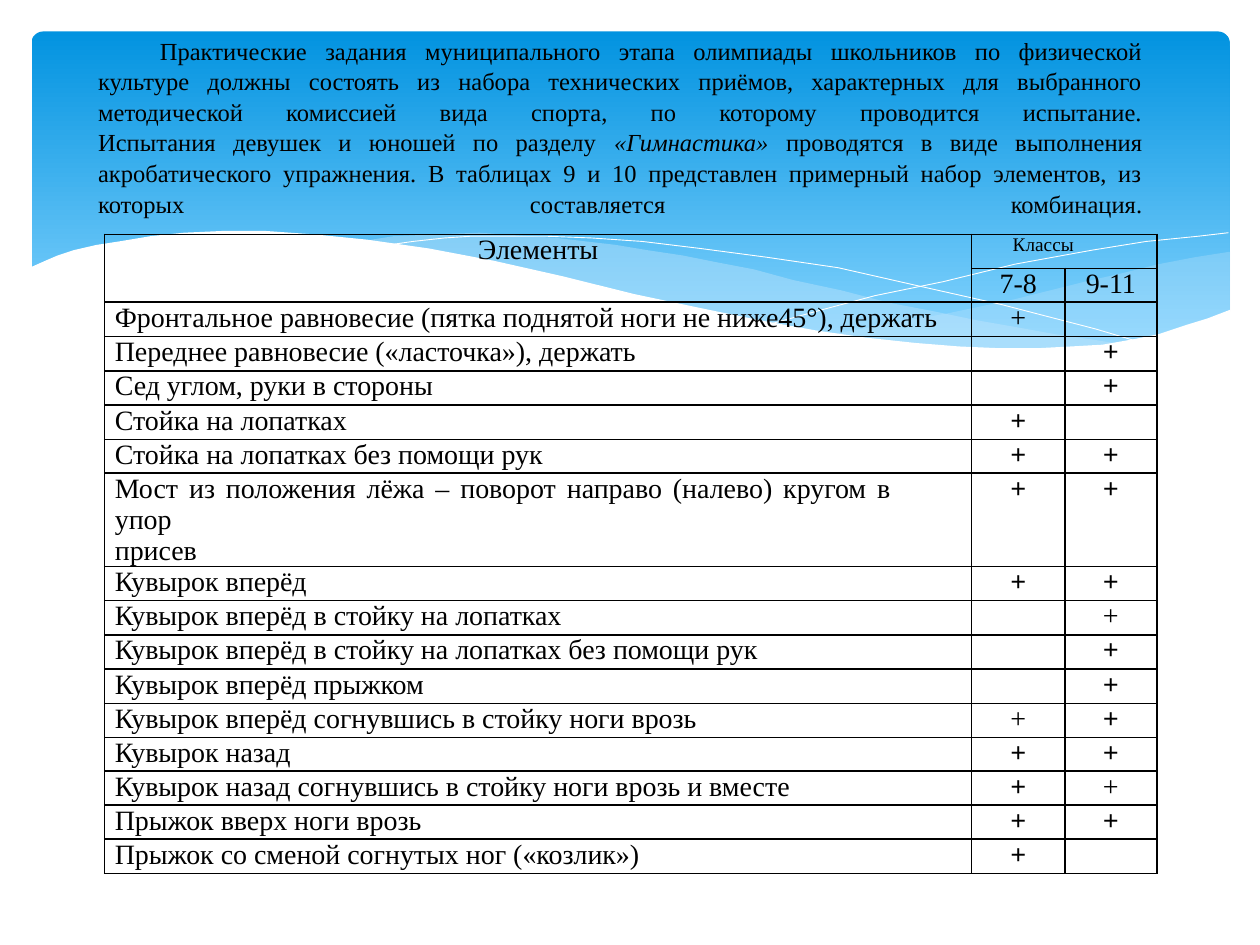
from lxml import etree
from pptx import Presentation
from pptx.dml.color import RGBColor
from pptx.enum.shapes import MSO_SHAPE
from pptx.enum.text import MSO_ANCHOR, PP_ALIGN
from pptx.oxml.ns import qn
from pptx.util import Pt

CENTER, JUSTIFY, LEFT = PP_ALIGN.CENTER, PP_ALIGN.JUSTIFY, PP_ALIGN.LEFT
FONT = "Times New Roman"
BLACK, WHITE, PALE_BLUE = "000000", "FFFFFF", "C6E7FC"
TITLE_SIZE, HEAD_SIZE, BODY_SIZE = 14, 11, 16

# Each inner list is a line of (text, italic) pieces; lines end with a break.
TITLE_LINES = [
    [("Практические задания муниципального этапа олимпиады школьников по физической "
      "культуре должны состоять из набора технических приёмов, характерных для "
      "выбранного методической комиссией вида спорта, по которому проводится "
      "испытание.", False)],
    [("Испытания девушек и юношей по разделу ", False),
     ("«Гимнастика» ", True),
     ("проводятся в виде выполнения акробатического упражнения. В таблицах 9 и 10 "
      "представлен примерный набор элементов, из которых составляется "
      "комбинация.", False)],
]

# Element, mark for 7-8, mark for 9-11: "B" bold plus, "+" regular plus, "" none
ELEMENTS = [
    ("Фронтальное равновесие (пятка поднятой ноги не ниже45°), держать", "+", ""),
    ("Переднее равновесие («ласточка»), держать", "", "B"),
    ("Сед углом, руки в стороны", "", "B"),
    ("Стойка на лопатках", "B", ""),
    ("Стойка на лопатках без помощи рук", "B", "B"),
    ("Мост из положения лёжа – поворот направо (налево) кругом в упор\nприсев", "B", "B"),
    ("Кувырок вперёд", "B", "B"),
    ("Кувырок вперёд в стойку на лопатках", "", "+"),
    ("Кувырок вперёд в стойку на лопатках без помощи рук", "", "B"),
    ("Кувырок вперёд прыжком", "", "B"),
    ("Кувырок вперёд согнувшись в стойку ноги врозь", "+", "B"),
    ("Кувырок назад", "B", "B"),
    ("Кувырок назад согнувшись в стойку ноги врозь и вместе", "B", "+"),
    ("Прыжок вверх ноги врозь", "B", "B"),
    ("Прыжок со сменой согнутых ног («козлик»)", "B", ""),
]
COLUMN_WIDTHS = [495.4, 53.3, 52.6]
ROW_HEIGHT, TALL_ROW_HEIGHT = 19.4, 53.3

RIGHT_SWELL = [
    (702, 144), (682.6, 146.9), (662.4, 151.2), (641.5, 155.5), (619.9, 160.6),
    (579.6, 170.6), (542.2, 178.6), (508.3, 185), (475.9, 190.8), (497.5, 193.7),
    (517.7, 195.8), (536.4, 198), (553.7, 199.4), (570.2, 199.4), (586.1, 200.2),
    (601.2, 199.4), (614.9, 198.7), (627.8, 197.3), (640.1, 195.8), (651.6, 193.7),
    (663.1, 190.8), (673.2, 188.6), (683.3, 185), (693.4, 181.4), (702.7, 177.8),
    (702.7, 144)]
MIDDLE_SWELL = [
    (643, 196.6), (623.5, 193.7), (602.6, 190.8), (581, 187.2), (558, 182.9),
    (533.5, 177.8), (508.3, 172.8), (481, 166.3), (452.9, 159.8), (430.6, 154.1),
    (409.7, 149.8), (389.5, 146.2), (370.1, 142.6), (352.1, 139.7), (334.8, 137.5),
    (318.2, 136.1), (302.4, 134.6), (273.6, 133.2), (247.7, 133.9), (225.4, 135.4),
    (205.9, 137.5), (232.6, 141.1), (260.6, 146.2), (290.9, 151.9), (323.3, 159.8),
    (353.5, 167), (381.6, 172.8), (407.5, 178.6), (432.7, 183.6), (456.5, 187.9),
    (478.8, 191.5), (500.4, 194.4), (519.8, 197.3), (538.6, 198.7), (556.6, 199.4),
    (573.1, 200.2), (596.2, 200.2), (617, 199.4), (630.7, 198)]
FALLING_LINE = [
    (222.5, 140.4), (236.2, 138.2), (254.2, 136.1), (269.3, 135.4), (288.7, 134.6),
    (311.8, 134.6), (337.7, 136.1), (367.2, 138.2), (400.3, 141.8), (437.8, 146.9),
    (478.8, 153.4), (523.4, 162.7), (572.4, 173.5), (625.7, 187.9), (653, 195.8)]
RISING_LINE = [
    (441.4, 185), (470.2, 177.1), (500.4, 169.2), (538.6, 160.6), (580.3, 151.2),
    (623.5, 143.3), (655.2, 138.2), (684.7, 134.6), (702, 133.2)]
WHITE_WAVE = [
    (703.4, 177.1), (690.5, 182.2), (676.8, 186.5), (662.4, 190.8), (647.3, 193.7),
    (630, 196.6), (612, 198), (592.6, 199.4), (571, 198.7), (547.9, 198),
    (522.7, 195.8), (495.4, 193), (466.6, 188.6), (434.2, 182.9), (399.6, 176.4),
    (362.2, 167.8), (321.8, 158.4), (281.5, 149), (244.8, 141.8), (210.2, 136.8),
    (180, 133.9), (151.9, 132.5), (127.4, 132.5), (105.1, 133.2), (85.7, 134.6),
    (68.4, 137.5), (54.7, 140.4), (42.5, 143.3), (33.1, 146.2), (25.9, 149),
    (16.6, 153.4), (16.6, 236.9), (703.4, 236.9)]
# Points, fill, opacity in percent; no fill makes an open white line
WAVES = [
    (RIGHT_SWELL, PALE_BLUE, 29),
    (MIDDLE_SWELL, PALE_BLUE, 40),
    (FALLING_LINE, None, 100),
    (RISING_LINE, None, 100),
    (WHITE_WAVE, WHITE, 100),
]


def rgb(color):
    return RGBColor.from_string(color)


def add_wave(slide, points, fill, opacity):
    builder = slide.shapes.build_freeform(*points[0], scale=Pt(1))
    builder.add_line_segments(points[1:], close=fill is not None)
    wave = builder.convert_to_shape()
    wave.shadow.inherit = False
    if fill is None:
        wave.fill.background()
        wave.line.color.rgb = rgb(WHITE)
        wave.line.width = Pt(0.5)
        return
    wave.line.fill.background()
    wave.fill.solid()
    wave.fill.fore_color.rgb = rgb(fill)
    if opacity < 100:
        color = wave.fill._xPr.find(".//" + qn("a:srgbClr"))
        etree.SubElement(color, qn("a:alpha"), val=str(opacity * 1000))


def format_paragraph(paragraph, size, align, left=0, right=0, first=0, bold=False):
    """Format runs, breaks and the paragraph end alike."""
    paragraph.alignment = align
    properties = paragraph._p.get_or_add_pPr()
    for name, length in (("marL", left), ("marR", right), ("indent", first)):
        properties.set(name, str(int(Pt(length))))
    for run in paragraph.runs:
        run.font.name = FONT
        run.font.size = Pt(size)
        run.font.bold = bold
        run.font.color.rgb = rgb(BLACK)
    for line_break in paragraph._p.findall(qn("a:br")):
        etree.SubElement(line_break, qn("a:rPr"), sz=str(size * 100))
    etree.SubElement(paragraph._p, qn("a:endParaRPr"), sz=str(size * 100))


def add_border(cell):
    properties = cell._tc.get_or_add_tcPr()
    for position, side in enumerate(("a:lnL", "a:lnR", "a:lnT", "a:lnB")):
        line = etree.Element(qn(side), w=str(int(Pt(1))))
        solid = etree.SubElement(line, qn("a:solidFill"))
        etree.SubElement(solid, qn("a:srgbClr"), val=BLACK)
        properties.insert(position, line)


def fill_cell(cell, text, size=BODY_SIZE, align=CENTER, **layout):
    cell.text_frame.text = text
    for paragraph in cell.text_frame.paragraphs:
        format_paragraph(paragraph, size, align, **layout)


def add_backdrop(slide):
    sky = slide.shapes.add_shape(MSO_SHAPE.ROUNDED_RECTANGLE,
                                 Pt(18), Pt(18), Pt(684.7), Pt(194.4))
    sky.adjustments[0] = 0.034
    sky.shadow.inherit = False
    sky.line.fill.background()
    sky.fill.gradient()
    sky.fill.gradient_angle = 270
    for stop, color, position in zip(sky.fill.gradient_stops, ("0293E0", "83D3FE"), (0, 0.9)):
        stop.color.rgb = rgb(color)
        stop.position = position
    for wave in WAVES:
        add_wave(slide, *wave)


def add_elements_table(slide):
    row_count = len(ELEMENTS) + 2
    table = slide.shapes.add_table(row_count, 3, Pt(59.8), Pt(133.9), Pt(sum(COLUMN_WIDTHS)),
                                   Pt(ROW_HEIGHT * row_count)).table
    table.first_row = table.horz_banding = False
    for column, width in zip(table.columns, COLUMN_WIDTHS):
        column.width = Pt(width)
    for row in table.rows:
        row.height = Pt(ROW_HEIGHT)
    for cell in table.iter_cells():
        cell.fill.background()
        cell.margin_left = cell.margin_right = cell.margin_top = cell.margin_bottom = 0
        add_border(cell)

    table.cell(0, 0).merge(table.cell(1, 0))
    table.cell(0, 1).merge(table.cell(0, 2))
    fill_cell(table.cell(0, 0), "Элементы")
    fill_cell(table.cell(0, 1), "Классы", HEAD_SIZE, LEFT, left=23.5)
    fill_cell(table.cell(1, 1), "7-8")
    fill_cell(table.cell(1, 2), "9-11")
    for row, (element, *marks) in enumerate(ELEMENTS, start=2):
        if "\n" in element:
            table.rows[row].height = Pt(TALL_ROW_HEIGHT)
            fill_cell(table.cell(row, 0), element, align=JUSTIFY, left=5.8, right=46)
        else:
            fill_cell(table.cell(row, 0), element, align=LEFT, left=5.8)
        for column, mark in enumerate(marks, start=1):
            fill_cell(table.cell(row, column), "+" if mark else "", bold=mark == "B")


def add_title(slide):
    frame = slide.shapes.add_textbox(Pt(36), Pt(21.6), Pt(648), Pt(118)).text_frame
    frame.word_wrap = True
    frame.vertical_anchor = MSO_ANCHOR.MIDDLE
    paragraph = frame.paragraphs[0]
    for line in TITLE_LINES:
        for text, italic in line:
            run = paragraph.add_run()
            run.text = text
            run.font.italic = italic
        paragraph.add_line_break()
    paragraph.line_spacing = 1.04
    format_paragraph(paragraph, TITLE_SIZE, JUSTIFY, left=13, right=24, first=35.3)


def main():
    presentation = Presentation()
    presentation.slide_width, presentation.slide_height = Pt(720), Pt(540)
    slide = presentation.slides.add_slide(presentation.slide_layouts[6])
    add_backdrop(slide)
    add_elements_table(slide)
    add_title(slide)
    presentation.save("out.pptx")


if __name__ == "__main__":
    main()
